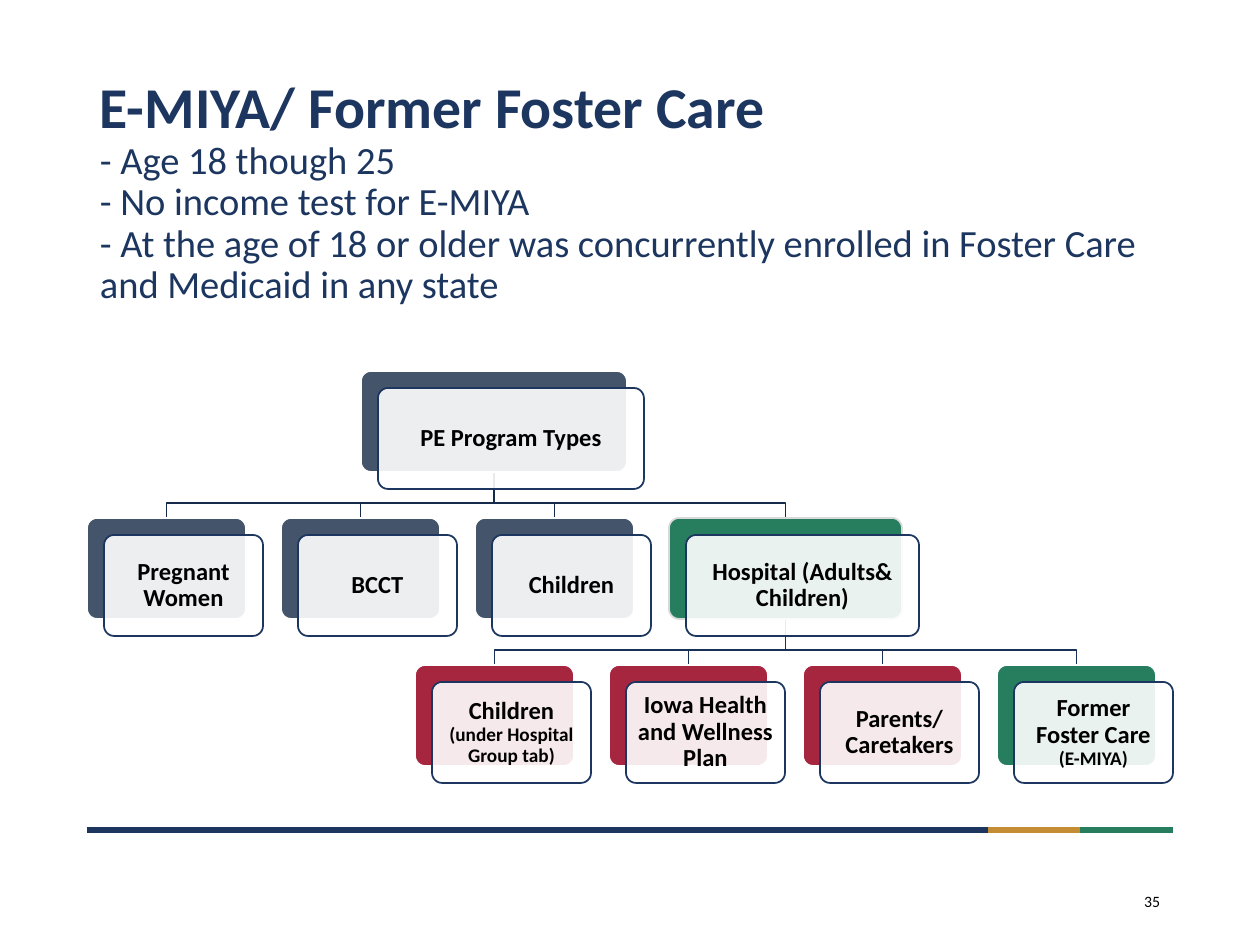
from lxml import etree
from pptx import Presentation
from pptx.dml.color import RGBColor
from pptx.enum.shapes import MSO_CONNECTOR, MSO_SHAPE
from pptx.enum.text import MSO_ANCHOR, PP_ALIGN
from pptx.oxml.ns import qn
from pptx.util import Pt

SCALE = 914400 / 126
NAVY, SLATE, GREEN, RED, GOLD = "1C365F", "44546A", "277E5F", "A7263F", "C48D34"
WHITE, BLACK, GREY = "FFFFFF", "000000", "D9D9D9"

TITLE = [
    ("E-MIYA/ Former Foster Care", 33, True),
    ("- Age 18 though 25", 22, False),
    ("- No income test for E-MIYA", 22, False),
    ("- At the age of 18 or older was concurrently enrolled in Foster Care "
     "and Medicaid in any state", 22, False),
]
ROOT = ("PE Program Types", "", SLATE, WHITE, 266)
PROGRAMS = [
    ("Pregnant Women", "", SLATE, WHITE, 159),
    ("BCCT", "", SLATE, WHITE, 159),
    ("Children", "", SLATE, WHITE, 159),
    ("Hospital (Adults& Children)", "", GREEN, GREY, 233),
]
HOSPITAL_GROUPS = [
    ("Children ", "(under Hospital Group tab)", RED, WHITE, 159),
    ("Iowa Health and Wellness Plan", "", RED, WHITE, 159),
    ("Parents/ Caretakers", "", RED, WHITE, 159),
    ("Former Foster Care ", "(E-MIYA)", GREEN, WHITE, 159),
]
FOOTER_LINES = [(87, 988, NAVY), (988, 1080, GOLD), (1080, 1173, GREEN)]
FOOTER_Y = 830
TOP, ROW_PITCH, CARD_H, GAP = 371, 147, 101, 35
SHIFT_X, SHIFT_Y = 17, 17


def px(*values):
    return [round(v * SCALE) for v in values]


def color(value):
    return RGBColor.from_string(value)


def add_run(p, text, size=14, bold=True, fill=BLACK):
    r = p.add_run()
    r.text = text
    r.font.name = "Calibri"
    r.font.size = Pt(size)
    r.font.bold = bold
    r.font.color.rgb = color(fill)


def write(s, runs, align=PP_ALIGN.LEFT, fill=BLACK, margins=(13, 6),
          spacing=0.9, breaks=False):
    tf = s.text_frame
    tf.word_wrap = True
    tf.vertical_anchor = MSO_ANCHOR.MIDDLE
    tf.margin_left = tf.margin_right = px(margins[0])[0]
    tf.margin_top = tf.margin_bottom = px(margins[1])[0]
    p = tf.paragraphs[0]
    p.alignment = align
    p.line_spacing = spacing
    for i, (text, size, bold) in enumerate(runs):
        if breaks and i:
            p.add_line_break()
        add_run(p, text, size, bold, fill)


def add_round(x, y, w, fill, line, alpha=None):
    s = slide.shapes.add_shape(MSO_SHAPE.ROUNDED_RECTANGLE, *px(x, y, w, CARD_H))
    s.adjustments[0] = 0.1
    s.shadow.inherit = False
    s.fill.solid()
    s.fill.fore_color.rgb = color(fill)
    if alpha:
        rgb = s.fill._xPr.find(qn("a:solidFill"))[0]
        etree.SubElement(rgb, qn("a:alpha")).set("val", str(alpha * 1000))
    s.line.color.rgb = color(line)
    s.line.width = Pt(1)
    return s


def add_card(x, y, card):
    label, note, fill, line, w = card
    add_round(x, y, w, fill, line)
    s = add_round(x + SHIFT_X, y + SHIFT_Y, w, WHITE, NAVY, alpha=90)
    runs = [(label, 14, True)] + ([(note, 11, True)] if note else [])
    write(s, runs, align=PP_ALIGN.CENTER, margins=(7, 7))


def place_row(x, level, cards):
    placed = []
    for card in cards:
        placed.append((x, TOP + level * ROW_PITCH, card))
        x += card[-1] + GAP
    return placed


def center(node):
    x, _, card = node
    return x + card[-1] / 2


def add_elbow(parent, child, line):
    x1, y1, x2, y2 = center(parent), parent[1] + CARD_H, center(child), child[1]
    mid = y2 - 15
    points = [tuple(px(x, y)) for x, y in ((x1, y1), (x1, mid), (x2, mid), (x2, y2))]
    builder = slide.shapes.build_freeform(*points[0])
    builder.add_line_segments(points[1:], close=False)
    s = builder.convert_to_shape()
    s.shadow.inherit = False
    s.fill.background()
    s.line.color.rgb = color(line)
    s.line.width = Pt(1)


prs = Presentation()
prs.slide_width, prs.slide_height = px(1260, 945)
slide = prs.slides.add_slide(prs.slide_layouts[6])

for x1, x2, fill in FOOTER_LINES:
    s = slide.shapes.add_connector(MSO_CONNECTOR.STRAIGHT, *px(x1, FOOTER_Y, x2, FOOTER_Y))
    s.line.color.rgb = color(fill)
    s.line.width = Pt(3)
    etree.SubElement(s._element.spPr, qn("a:effectLst"))

write(slide.shapes.add_textbox(*px(87, 50, 1086, 286)), TITLE, fill=NAVY, breaks=True)

[root] = place_row(361, 0, [ROOT])
programs = place_row(87, 1, PROGRAMS)
groups = place_row(415, 2, HOSPITAL_GROUPS)
for parent, children, line in ((programs[-1], groups, "193156"), (root, programs, "162B4C")):
    for child in children:
        add_elbow(parent, child, line)
for node in [root, *programs, *groups]:
    add_card(*node)

write(slide.shapes.add_textbox(*px(890, 876, 283, 50)), [("35", 9, False)],
      align=PP_ALIGN.RIGHT, spacing=1.0)

prs.save("out.pptx")
